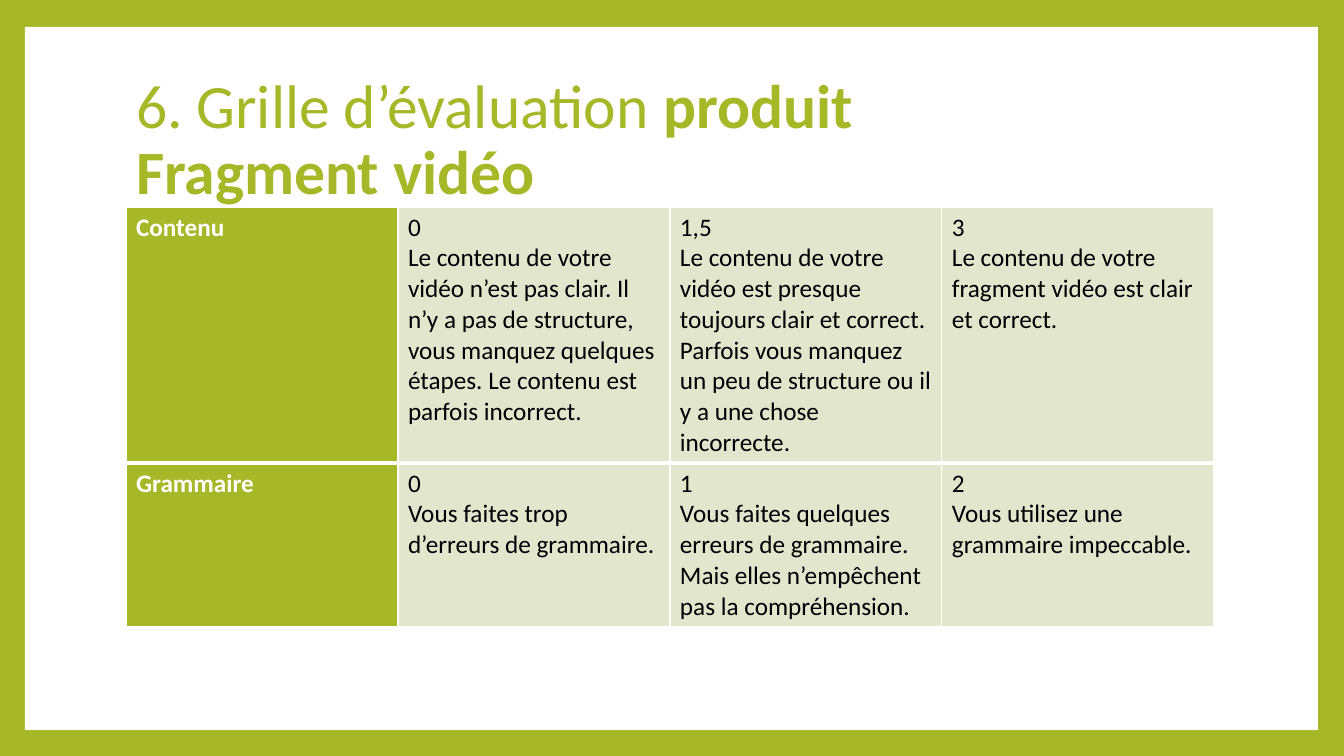
from lxml.etree import SubElement
from pptx import Presentation
from pptx.dml.color import RGBColor
from pptx.enum.shapes import MSO_SHAPE
from pptx.enum.text import MSO_ANCHOR, MSO_AUTO_SIZE, PP_ALIGN
from pptx.oxml.ns import qn
from pptx.util import Emu, Pt

TITLE_START = "6. Grille d’évaluation "
TITLE_BOLD = ["produit", "Fragment vidéo"]
CRITERIA = [
    ("Contenu", [
        ("0", "Le contenu de votre vidéo n’est pas clair. Il n’y a pas de structure, "
              "vous manquez quelques étapes. Le contenu est parfois incorrect."),
        ("1,5", "Le contenu de votre vidéo est presque toujours clair et correct. "
                "Parfois vous manquez un peu de structure ou il y a une chose incorrecte."),
        ("3", "Le contenu de votre fragment vidéo est clair et correct."),
    ]),
    ("Grammaire", [
        ("0", "Vous faites trop d’erreurs de grammaire."),
        ("1", "Vous faites quelques erreurs de grammaire. "
              "Mais elles n’empêchent pas la compréhension."),
        ("2", "Vous utilisez une grammaire impeccable."),
    ]),
]
COLORS = {"green": "A6B727", "pale": "E1E6CD", "white": "FFFFFF", "black": "000000"}
FONT = "Calibri"
PANEL_BOX = (25, 27, 1293, 703)
TITLE_BOX = (126, 67, 1089, 149)
TABLE_LEFT, TABLE_TOP = 126, 207
COLUMN_WIDTH = 272
ROW_HEIGHTS = [256, 163]


def px(length):
    return Emu(round(length * 914400 / 100.8))


def color(name):
    return RGBColor.from_string(COLORS[name])


def style_font(font, size, color_name, bold=None):
    font.name = FONT
    font.size = Pt(size)
    font.color.rgb = color(color_name)
    font.bold = bold


def add_borders(cell, top, bottom):
    properties = cell._tc.get_or_add_tcPr()
    for side, width in (("L", 1), ("R", 1), ("T", top), ("B", bottom)):
        line = SubElement(properties, qn(f"a:ln{side}"), w=str(Pt(width)))
        fill = SubElement(line, qn("a:solidFill"))
        SubElement(fill, qn("a:srgbClr"), val=COLORS["white"])


def fill_cell(cell, lines, fill_name, text_name, bold):
    cell.fill.solid()
    cell.fill.fore_color.rgb = color(fill_name)
    cell.text = "\n".join(lines)
    for paragraph in cell.text_frame.paragraphs:
        style_font(paragraph.font, 18, text_name, bold)


def add_panel(slide):
    panel = slide.shapes.add_shape(MSO_SHAPE.RECTANGLE, *map(px, PANEL_BOX))
    panel.shadow.inherit = False
    panel.fill.solid()
    panel.fill.fore_color.rgb = color("white")
    panel.line.fill.background()
    slide.shapes.title.element.addprevious(panel.element)


def write_title(title):
    title.left, title.top, title.width, title.height = map(px, TITLE_BOX)
    frame = title.text_frame
    frame.auto_size = MSO_AUTO_SIZE.NONE
    frame.vertical_anchor = MSO_ANCHOR.MIDDLE
    paragraph = frame.paragraphs[0]
    paragraph.alignment = PP_ALIGN.LEFT
    paragraph.line_spacing = 0.9
    style_font(paragraph.font, 44, "green")
    paragraph.add_run().text = TITLE_START
    for index, line in enumerate(TITLE_BOLD):
        if index:
            paragraph.add_line_break()
        run = paragraph.add_run()
        run.text = line
        run.font.bold = True


def add_grid(slide):
    column_count = 1 + len(CRITERIA[0][1])
    table = slide.shapes.add_table(
        len(CRITERIA), column_count, px(TABLE_LEFT), px(TABLE_TOP),
        px(column_count * COLUMN_WIDTH), px(sum(ROW_HEIGHTS))).table
    for column in table.columns:
        column.width = px(COLUMN_WIDTH)
    for index, (criterion, levels) in enumerate(CRITERIA):
        table.rows[index].height = px(ROW_HEIGHTS[index])
        cells = list(table.rows[index].cells)
        top = 3 if index else 1
        bottom = 3 if index < len(CRITERIA) - 1 else 1
        for cell in cells:
            add_borders(cell, top, bottom)
        fill_cell(cells[0], [criterion], "green", "white", True)
        for cell, level in zip(cells[1:], levels):
            fill_cell(cell, level, "pale", "black", False)


def main():
    presentation = Presentation()
    presentation.slide_width, presentation.slide_height = px(1344), px(756)
    slide = presentation.slides.add_slide(presentation.slide_layouts[5])
    slide.background.fill.solid()
    slide.background.fill.fore_color.rgb = color("green")
    add_panel(slide)
    write_title(slide.shapes.title)
    add_grid(slide)
    presentation.save("out.pptx")


if __name__ == "__main__":
    main()
